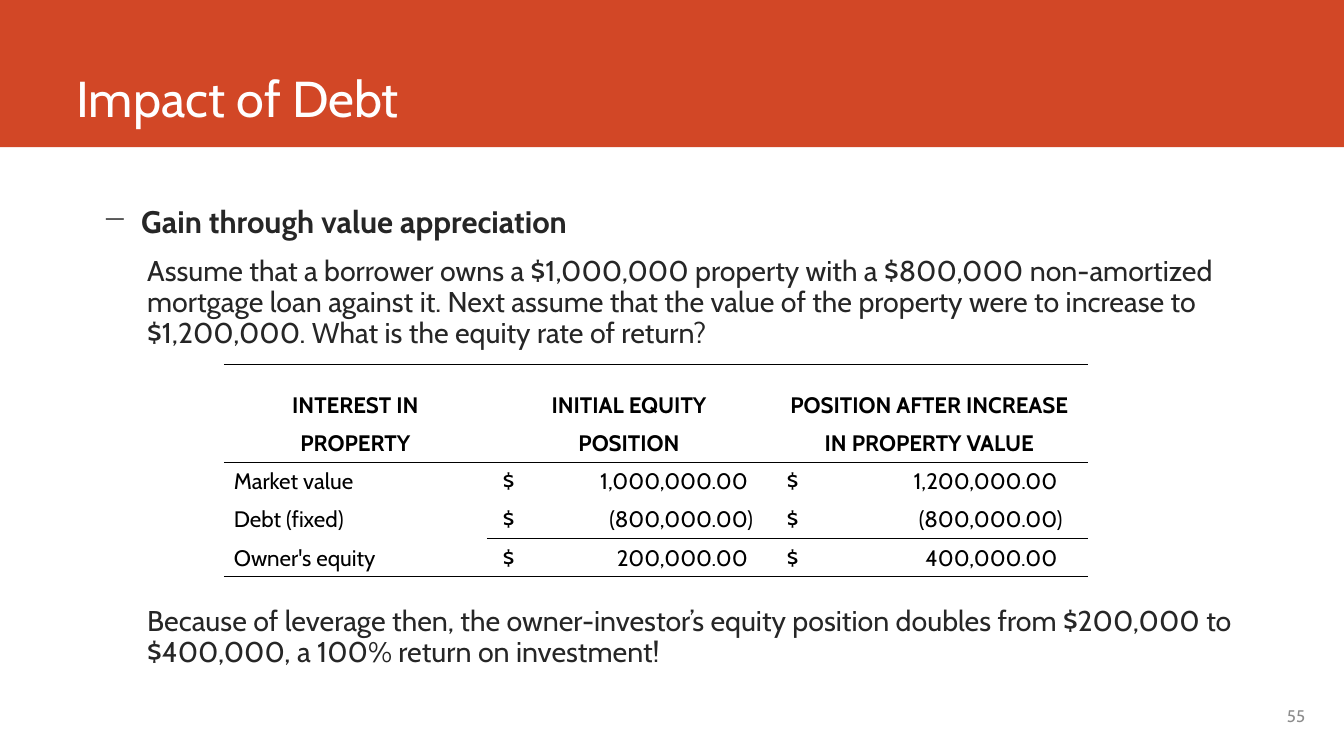
from lxml import etree
from pptx import Presentation
from pptx.dml.color import RGBColor
from pptx.enum.shapes import MSO_SHAPE as Shape
from pptx.enum.text import MSO_ANCHOR as Anchor, PP_ALIGN as Align
from pptx.oxml.ns import qn
from pptx.util import Cm, Pt

FONT = "Cabin"
COLORS = {"banner": "D24726", "title": "FFFFFF", "body": "262626",
          "table": "000000", "number": "8C8C8C"}

TITLE = "Impact of Debt"
HEADING = "Gain through value appreciation"
QUESTION = ("Assume that a borrower owns a $1,000,000 property with a $800,000 "
            "non-amortized mortgage loan against it. Next assume that the value of "
            "the property were to increase to $1,200,000. What is the equity rate "
            "of return?")
ANSWER = ("Because of leverage then, the owner-investor’s equity position doubles "
          "from $200,000 to $400,000, a 100% return on investment!")
PAGE = "55"

HEADER_ROWS = 2
POSITIONS = [
    ("INTEREST IN", "INITIAL EQUITY", "POSITION AFTER INCREASE"),
    ("PROPERTY", "POSITION", "IN PROPERTY VALUE"),
    ("Market value", "$\t1,000,000.00", "$\t1,200,000.00"),
    ("Debt (fixed)", "$\t(800,000.00)", "$\t(800,000.00)"),
    ("Owner's equity", "$\t200,000.00", "$\t400,000.00"),
]
COLUMN_WIDTHS = (6.63, 7.16, 7.98)
ROW_HEIGHTS = (1.5, 0.96, 0.96, 0.96, 0.96)
DECIMAL_TABS = {1: 5.28, 2: 5.92}
# Row index: the columns that carry a rule on that side
RULES = {"a:lnT": {0: (0, 1, 2), 4: (1, 2)},
         "a:lnB": {1: (0, 1, 2), 3: (1, 2), 4: (0, 1, 2)}}

# Text, size, bold, left indent and first-line indent in cm, space before in pt
BODY = [
    (HEADING, 22.2, True, 0.97, -0.97, 6),
    (QUESTION, 20.4, False, 1.12, 0, 6),
    (ANSWER, 20.4, False, 1.12, 0, 178),
]


def rgb(part):
    return RGBColor.from_string(COLORS[part])


def write(paragraph, text, size, part, bold=False):
    run = paragraph.add_run()
    run.text = text
    style = {"name": FONT, "size": Pt(size), "bold": bold}
    for key, value in style.items():
        setattr(run.font, key, value)
    run.font.color.rgb = rgb(part)


def add_box(slide, left, top, width, height, anchor):
    box = slide.shapes.add_textbox(Cm(left), Cm(top), Cm(width), Cm(height))
    layout = {"word_wrap": True, "vertical_anchor": anchor}
    for key, value in layout.items():
        setattr(box.text_frame, key, value)
    return box.text_frame


def add_banner(slide, width):
    banner = slide.shapes.add_shape(Shape.RECTANGLE, 0, 0, width, Cm(3.71))
    banner.shadow.inherit = False
    banner.fill.solid()
    banner.fill.fore_color.rgb = rgb("banner")
    banner.line.fill.background()
    title = add_box(slide, 1.68, 0, 29.87, 3.35, Anchor.BOTTOM)
    write(title.paragraphs[0], TITLE, 36, "title")


def add_body(slide):
    frame = add_box(slide, 2.34, 5.08, 29.21, 12.24, Anchor.TOP)
    for i, (text, size, bold, left, first, before) in enumerate(BODY):
        paragraph = frame.add_paragraph() if i else frame.paragraphs[0]
        spacing = {"line_spacing": 0.9, "space_before": Pt(before),
                   "space_after": Pt(6)}
        for key, value in spacing.items():
            setattr(paragraph, key, value)
        props = paragraph._p.get_or_add_pPr()
        props.set("marL", str(Cm(left)))
        props.set("indent", str(Cm(first)))
        if first:
            etree.SubElement(props, qn("a:buChar")).set("char", "−")
        write(paragraph, text, size, "body", bold)


def add_rule(cell, side, position):
    line = etree.Element(qn(side), w=str(Pt(1)))
    fill = etree.SubElement(line, qn("a:solidFill"))
    etree.SubElement(fill, qn("a:srgbClr")).set("val", COLORS["table"])
    cell._tc.get_or_add_tcPr().insert(position, line)


def fill_cell(cell, row, col):
    cell.vertical_anchor = Anchor.BOTTOM
    cell.fill.background()
    is_header = row < HEADER_ROWS
    paragraph = cell.text_frame.paragraphs[0]
    paragraph.alignment = Align.CENTER if is_header else Align.LEFT
    if not is_header and col in DECIMAL_TABS:
        cell.margin_left = Cm(0.4)
        stops = etree.SubElement(paragraph._p.get_or_add_pPr(), qn("a:tabLst"))
        etree.SubElement(stops, qn("a:tab"), pos=str(Cm(DECIMAL_TABS[col])),
                         algn="dec")
    write(paragraph, POSITIONS[row][col], 16, "table", is_header)
    sides = [side for side, rows in RULES.items() if col in rows.get(row, ())]
    for position, side in enumerate(sides):
        add_rule(cell, side, position)


def add_positions(slide):
    frame = slide.shapes.add_table(
        len(POSITIONS), len(COLUMN_WIDTHS), Cm(5.64), Cm(9.19),
        Cm(sum(COLUMN_WIDTHS)), Cm(sum(ROW_HEIGHTS)))
    table = frame.table
    table.first_row = table.horz_banding = False
    style = next(frame._element.iter(qn("a:tableStyleId")))
    style.text = "{2D5ABB26-0587-4C30-8999-92F81FD0307C}"
    for column, width in zip(table.columns, COLUMN_WIDTHS):
        column.width = Cm(width)
    for row, height in enumerate(ROW_HEIGHTS):
        table.rows[row].height = Cm(height)
        for col in range(len(COLUMN_WIDTHS)):
            fill_cell(table.cell(row, col), row, col)


def add_page_number(slide):
    number = add_box(slide, 24.05, 17.53, 9.09, 1.02, Anchor.MIDDLE).paragraphs[0]
    number.alignment = Align.RIGHT
    write(number, PAGE, 12, "number")


def main():
    deck = Presentation()
    deck.slide_width, deck.slide_height = Cm(33.87), Cm(19.05)
    slide = deck.slides.add_slide(deck.slide_layouts[6])
    add_banner(slide, deck.slide_width)
    add_body(slide)
    add_page_number(slide)
    add_positions(slide)
    deck.save("out.pptx")


if __name__ == "__main__":
    main()
